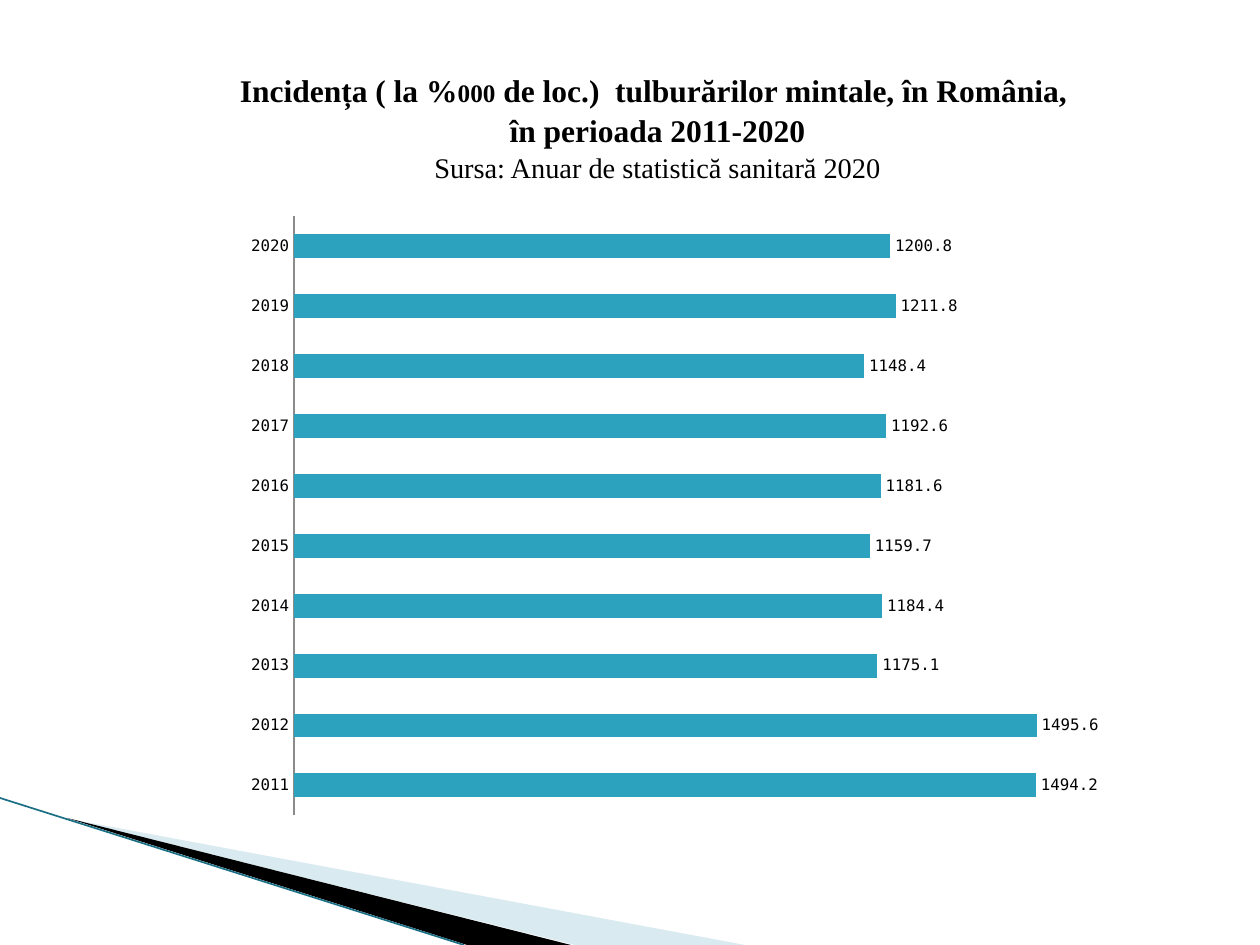
from pptx import Presentation, util as u
from pptx.chart import data
from pptx.dml import color
from pptx.enum import chart as ch, shapes, text
from pptx.oxml import parse_xml
from pptx.oxml.ns import nsdecls, qn
from lxml import etree


def px(n):
    return u.Emu(round(n * 914400 / 126))


def rgb(tint):
    return color.RGBColor.from_string(tint)


class Page:
    """Style and current slide, with a method for each kind of element."""

    ink, bar, axis = "000000", "2DA2BF", "8B8B8B"
    serif, mono = "Times New Roman", "DejaVu Sans Mono"

    def __init__(self, slide):
        self.slide = slide

    def wedge(self, points, tint, alpha=100):
        start, *rest = points
        form = self.slide.shapes.build_freeform(*start, scale=px(1))
        form.add_line_segments(rest, close=True)
        shape = form.convert_to_shape()
        shape.shadow.inherit = False
        shape.line.fill.background()
        shape.fill.solid()
        shape.fill.fore_color.rgb = rgb(tint)
        if alpha < 100:
            node = shape.fill._xPr.find(".//" + qn("a:srgbClr"))
            etree.SubElement(node, qn("a:alpha")).set("val", str(alpha * 1000))

    def line(self, start, end, tint, width):
        link = self.slide.shapes.add_connector(
            shapes.MSO_CONNECTOR.STRAIGHT, *map(px, start + end))
        link.line.color.rgb = rgb(tint)
        link.line.width = u.Pt(width)
        etree.SubElement(link._element.spPr, qn("a:effectLst"))

    def title(self, area, lines):
        frame = self.slide.shapes.add_textbox(*map(px, area)).text_frame
        frame.word_wrap = True
        frame.margin_top = frame.margin_bottom = 0
        for i, runs in enumerate(lines):
            para = frame.add_paragraph() if i else frame.paragraphs[0]
            para.alignment = text.PP_ALIGN.CENTER
            para.line_spacing = 1.05
            for words, size, bold in runs:
                run = para.add_run()
                run.text = words
                self.font(run.font, size, self.serif)
                run.font.bold = bold

    def font(self, font, size, name):
        font.size, font.name = u.Pt(size), name
        font.color.rgb = rgb(self.ink)

    def bars(self, area, plot, cats, vals, top):
        info = data.CategoryChartData()
        info.categories = cats
        info.add_series("Series 1", vals)
        chart = self.slide.shapes.add_chart(
            ch.XL_CHART_TYPE.BAR_CLUSTERED, *map(px, area), info).chart
        chart.has_legend = chart.has_title = False
        self.font(chart.font, 10, self.mono)
        years, scale = chart.category_axis, chart.value_axis
        years.major_tick_mark = ch.XL_TICK_MARK.NONE
        years.format.line.color.rgb = rgb(self.axis)
        self.font(years.tick_labels.font, 9, self.mono)
        scale.minimum_scale, scale.maximum_scale = 0, top
        scale.has_major_gridlines = scale.visible = False
        group = chart.plots[0]
        group.gap_width = 150
        group.vary_by_categories = False
        fill = group.series[0].format.fill
        fill.solid()
        fill.fore_color.rgb = rgb(self.bar)
        group.has_data_labels = True
        labels = group.data_labels
        labels.show_value = True
        labels.position = ch.XL_LABEL_POSITION.OUTSIDE_END
        self.font(labels.font, 9, self.mono)
        self.place(chart, plot)

    def place(self, chart, plot):
        body = chart._chartSpace.find(".//" + qn("c:plotArea"))
        for old in body.findall(qn("c:layout")):
            body.remove(old)
        modes = "".join(f'<c:{k}Mode val="edge"/>' for k in "xy")
        spots = "".join(f'<c:{k} val="{v}"/>' for k, v in zip("xywh", plot))
        body.insert(0, parse_xml(
            f'<c:layout {nsdecls("c")}><c:manualLayout>'
            f'<c:layoutTarget val="inner"/>{modes}{spots}'
            '</c:manualLayout></c:layout>'))


def main():
    deck = Presentation()
    deck.slide_width, deck.slide_height = px(1260), px(945)
    page = Page(deck.slides.add_slide(deck.slide_layouts[6]))
    page.wedge([(69, 819), (745, 945), (575, 945)], "A0CBDC", 40)
    page.wedge([(67, 818), (571, 945), (467, 945)], "000000")
    page.line((0, 798), (464, 945), "1B6F85", 0.95)
    page.title((59, 69, 1197, 115), [
        [("Incidența ( la %", 18, True), ("000", 14.4, True),
         (" de loc.)  tulburărilor mintale, în România, ", 18, True)],
        [("în perioada 2011-2020", 18, True)],
        [("Sursa: Anuar de statistică sanitară 2020", 16.2, False)]])
    page.bars((233, 204, 873, 624), (0.07, 0.02, 0.91, 0.96),
              [str(year) for year in range(2011, 2021)],
              [1494.2, 1495.6, 1175.1, 1184.4, 1159.7,
               1181.6, 1192.6, 1148.4, 1211.8, 1200.8], 1600)
    deck.save("out.pptx")


if __name__ == "__main__":
    main()
